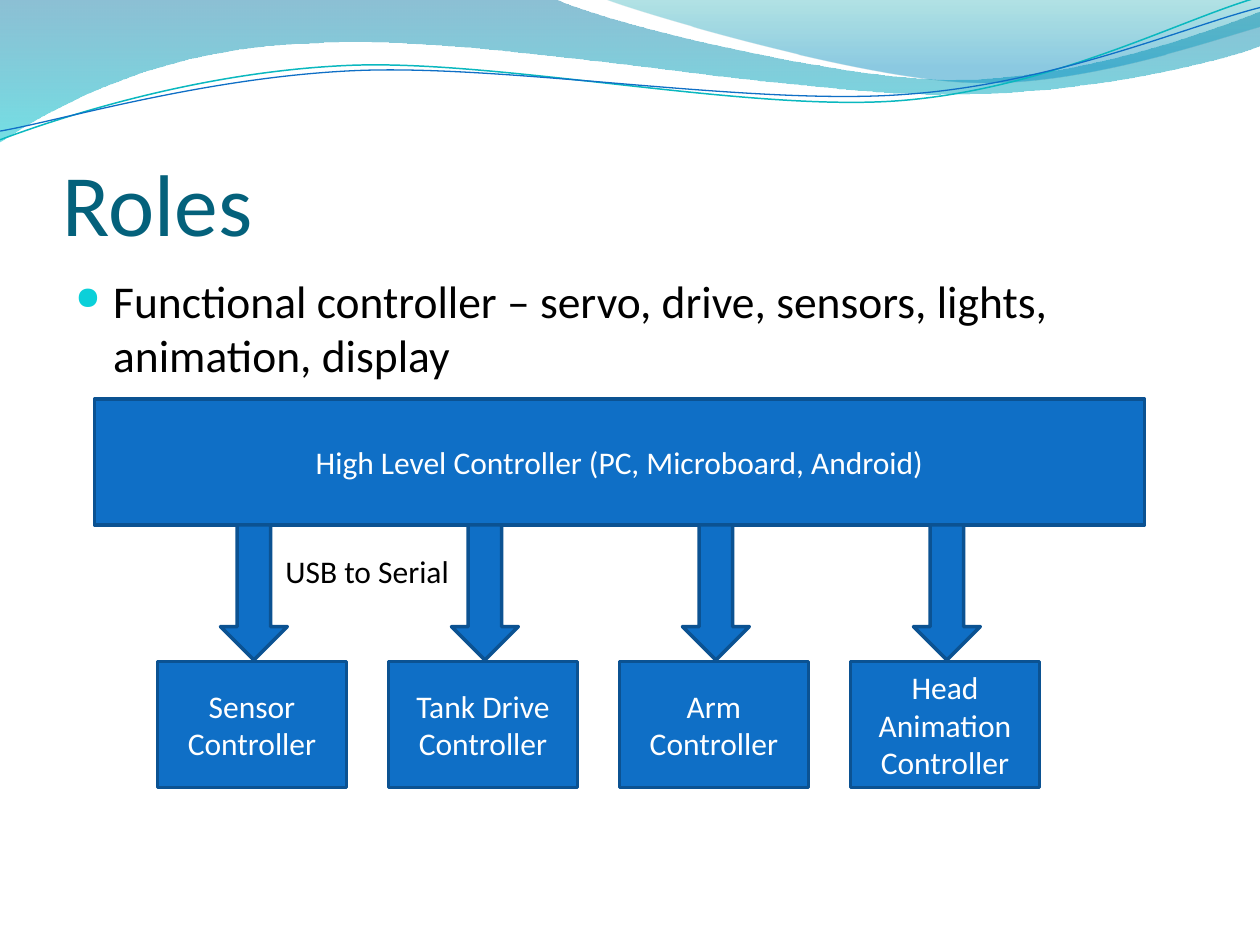
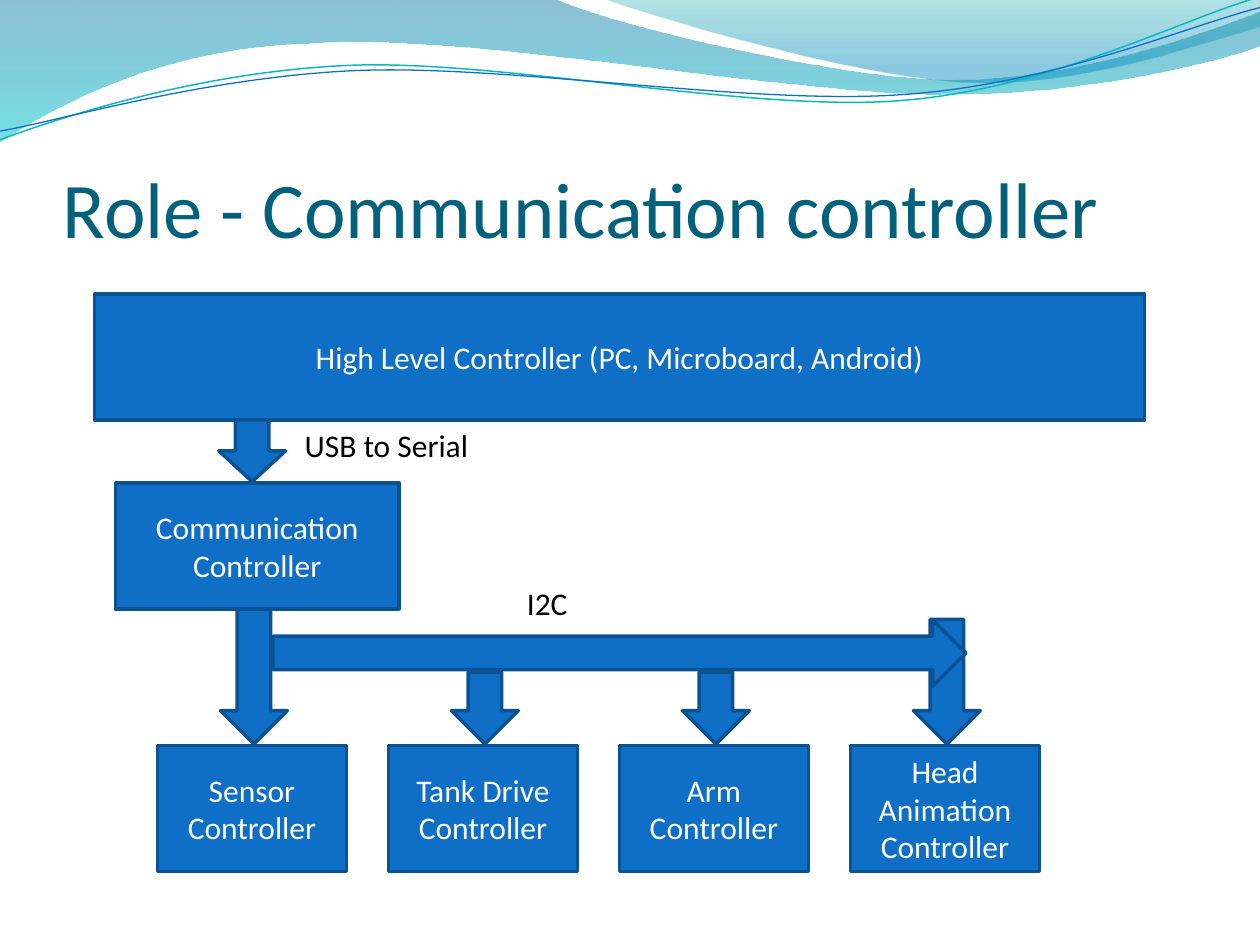
import pptx
import pptx.util
import pptx.dml.color
import pptx.enum.shapes
import pptx.enum.text
import lxml.etree

Pt = pptx.util.Pt
SHAPES = pptx.enum.shapes.MSO_SHAPE
ALIGN = pptx.enum.text.PP_ALIGN
ANCHOR = pptx.enum.text.MSO_ANCHOR

COLORS = {
    "title": "04617B",
    "text": "000000",
    "node": "0F6FC6",
    "node_edge": "0B5292",
    "node_text": "FFFFFF",
    "bullet": "0BD0D9",
    "wave_top": "0074A1",
    "wave_bottom": "00C6CF",
    "crest_top": "00A1A9",
    "crest_bottom": "008BBF",
    "teal_line": "0AB8BF",
    "blue_line": "0F6FC6",
}
FONT = "Calibri"

WAVE = [
    (0, 0), (316.8, -0.7),
    (342.7, 12.2, 478.1, 45.4, 545.8, 45.4),
    (614.2, 45.4, 689.8, 18.7, 720, 6.5),
    (720.7, 25.9),
    (707.8, 31.7, 626.4, 54.7, 537.1, 54),
    (447.8, 54, 275, 20.2, 185, 24.5),
    (92.9, 25.9, 33.1, 59.8, -0.7, 81.4),
]
CREST = [
    (344.9, -0.7),
    (366.5, 7.9, 491, 44.6, 553.7, 46.8),
    (616.3, 49.7, 691.9, 23, 720, 15.1),
    (720, 0),
]
TEAL_LINE = [
    (0, 79.9),
    (34.6, 67, 113.8, 41, 199.4, 37.4),
    (284.4, 33.8, 427, 64.1, 513.4, 57.6),
    (599.8, 51.1, 675.4, 10.8, 718.6, -1.4),
]
BLUE_LINE = [
    (0, 74.9),
    (33.8, 69.1, 118.1, 43.9, 203.8, 40.3),
    (290.2, 36.7, 429.8, 60.5, 516.2, 54),
    (601.9, 48.2, 677.5, 15.1, 720, 4.3),
]

HIGH_LEVEL = "High Level Controller (PC, Microboard, Android)"
CONTROLLERS = [
    "Sensor Controller",
    "Tank Drive Controller",
    "Arm Controller",
    "Head Animation Controller",
]
HIGH_LEVEL_BOX = (600, 72)
CONTROLLER_BOX = (108, 72)
CONTROLLER_PITCH = 132
ARROW_WIDTH = 38.2


def rgb(name):
    return pptx.dml.color.RGBColor.from_string(COLORS[name])


def write(shape, text, size=18, color="text", align=ALIGN.LEFT,
          anchor=ANCHOR.TOP, wrap=True, insets=(7.2, 3.6, 7.2, 3.6)):
    frame = shape.text_frame
    frame.word_wrap = wrap
    frame.vertical_anchor = anchor
    (frame.margin_left, frame.margin_top,
     frame.margin_right, frame.margin_bottom) = map(Pt, insets)
    paragraph = frame.paragraphs[0]
    paragraph.alignment = align
    run = paragraph.add_run()
    run.text = text
    run.font.name = FONT
    run.font.size = Pt(size)
    run.font.color.rgb = rgb(color)
    return paragraph


def text_area(slide, text, left, top, width, height, **text_format):
    area = slide.shapes.add_textbox(Pt(left), Pt(top), Pt(width), Pt(height))
    return write(area, text, **text_format)


def add_xml(parent, tag, **attributes):
    name = pptx.oxml.ns.qn(tag)
    return lxml.etree.SubElement(parent, name, attributes)


def outline(slide, segments, close):
    start, *corners = [(Pt(segment[-2]), Pt(segment[-1])) for segment in segments]
    builder = slide.shapes.build_freeform(*start)
    builder.add_line_segments(corners, close=close)
    shape = builder.convert_to_shape()
    shape.shadow.inherit = False
    for side, segment in zip(shape._element.xpath(".//a:lnTo"), segments[1:]):
        if len(segment) == 6:
            bend(side, segment, shape.left, shape.top)
    return shape


def bend(side, segment, left, top):
    side.tag = pptx.oxml.ns.qn("a:cubicBezTo")
    side.remove(side[0])
    for x, y in zip(segment[::2], segment[1::2]):
        add_xml(side, "a:pt", x=str(Pt(x) - left), y=str(Pt(y) - top))


def gradient_band(slide, segments, stops):
    band = outline(slide, segments, True)
    band.line.fill.background()
    band.fill.gradient()
    band.fill.gradient_angle = 270
    for stop, (position, color, _) in zip(band.fill.gradient_stops, stops):
        stop.position = position
        stop.color.rgb = rgb(color)
    tints = band._element.xpath(".//a:gs/a:srgbClr")
    for tint, (_, _, opacity) in zip(tints, stops):
        add_xml(tint, "a:alpha", val=str(opacity * 1000))


def wave_line(slide, segments, color, width):
    line = outline(slide, segments, False)
    line.fill.background()
    line.line.color.rgb = rgb(color)
    line.line.width = Pt(width)


def waves(slide):
    gradient_band(slide, WAVE, [(0, "wave_top", 45), (1, "wave_bottom", 55)])
    gradient_band(slide, CREST, [(0, "crest_top", 30), (0.8, "crest_bottom", 45)])
    wave_line(slide, TEAL_LINE, "teal_line", 0.85)
    wave_line(slide, BLUE_LINE, "blue_line", 0.75)


def titled_slide(deck, title, size):
    slide = deck.slides.add_slide(deck.slide_layouts[6])
    waves(slide)
    text_area(slide, title, 36, 55.2, 648, 90, size=size, color="title",
              anchor=ANCHOR.BOTTOM, insets=(0, 3.6, 0, 0))
    return slide


def bullet_text(slide, text, left, top, width, height):
    paragraph = text_area(slide, text, left, top, width, height, size=26)
    properties = paragraph._p.get_or_add_pPr()
    properties.set("marL", str(Pt(21.6)))
    properties.set("indent", str(Pt(-21.6)))
    add_xml(add_xml(properties, "a:buClr"), "a:srgbClr", val=COLORS["bullet"])
    add_xml(properties, "a:buSzPct", val="70000")
    add_xml(properties, "a:buChar", char="●")


def block(slide, kind, left, top, width, height):
    shape = slide.shapes.add_shape(kind, Pt(left), Pt(top), Pt(width), Pt(height))
    shape.shadow.inherit = False
    shape.fill.solid()
    shape.fill.fore_color.rgb = rgb("node")
    shape.line.color.rgb = rgb("node_edge")
    shape.line.width = Pt(2)
    return shape


def node(slide, text, left, top, width, height):
    box = block(slide, SHAPES.RECTANGLE, left, top, width, height)
    write(box, text, color="node_text", align=ALIGN.CENTER, anchor=ANCHOR.MIDDLE)


def down_arrow(slide, left, top, bottom):
    block(slide, SHAPES.DOWN_ARROW, left, top, ARROW_WIDTH, bottom - top)


def link_label(slide, text, left, top, width):
    text_area(slide, text, left, top, width, 29, wrap=False)


def controller_row(slide, left, top, arrow_tops):
    for index, (name, arrow_top) in enumerate(zip(CONTROLLERS, arrow_tops)):
        node_left = left + index * CONTROLLER_PITCH
        down_arrow(slide, node_left + 36, arrow_top, top - 0.8)
        node(slide, name, node_left, top, *CONTROLLER_BOX)


def direct_diagram(slide, left, top):
    node(slide, HIGH_LEVEL, left, top, *HIGH_LEVEL_BOX)
    controller_row(slide, left + 36, top + 150, [top + 72] * len(CONTROLLERS))
    link_label(slide, "USB to Serial", left + 102, top + 84, 108.7)


def bus_diagram(slide, left, top):
    node(slide, HIGH_LEVEL, left, top, *HIGH_LEVEL_BOX)
    arrow_tops = [top + drop for drop in (180, 216, 216, 186)]
    controller_row(slide, left + 36, top + 258, arrow_tops)
    down_arrow(slide, left + 71, top + 72, top + 107.2)
    node(slide, "Communication Controller", left + 12, top + 108, 162, 72)
    link_label(slide, "USB to Serial", left + 113, top + 72, 108.7)
    block(slide, SHAPES.RIGHT_ARROW, left + 102, top + 186, 396, ARROW_WIDTH)
    link_label(slide, "I2C", left + 240, top + 162, 38)


def roles_slide(deck):
    slide = titled_slide(deck, "Roles", 50)
    bullet_text(slide, "Functional controller – servo, drive, sensors, lights, "
                "animation, display", 36, 152.4, 648, 345.6)
    direct_diagram(slide, 54, 228)


def communication_slide(deck):
    slide = titled_slide(deck, "Role - Communication controller", 45)
    bus_diagram(slide, 54, 168)


def main():
    deck = pptx.Presentation()
    deck.slide_width = Pt(720)
    deck.slide_height = Pt(540)
    roles_slide(deck)
    communication_slide(deck)
    deck.save("out.pptx")


if __name__ == "__main__":
    main()
